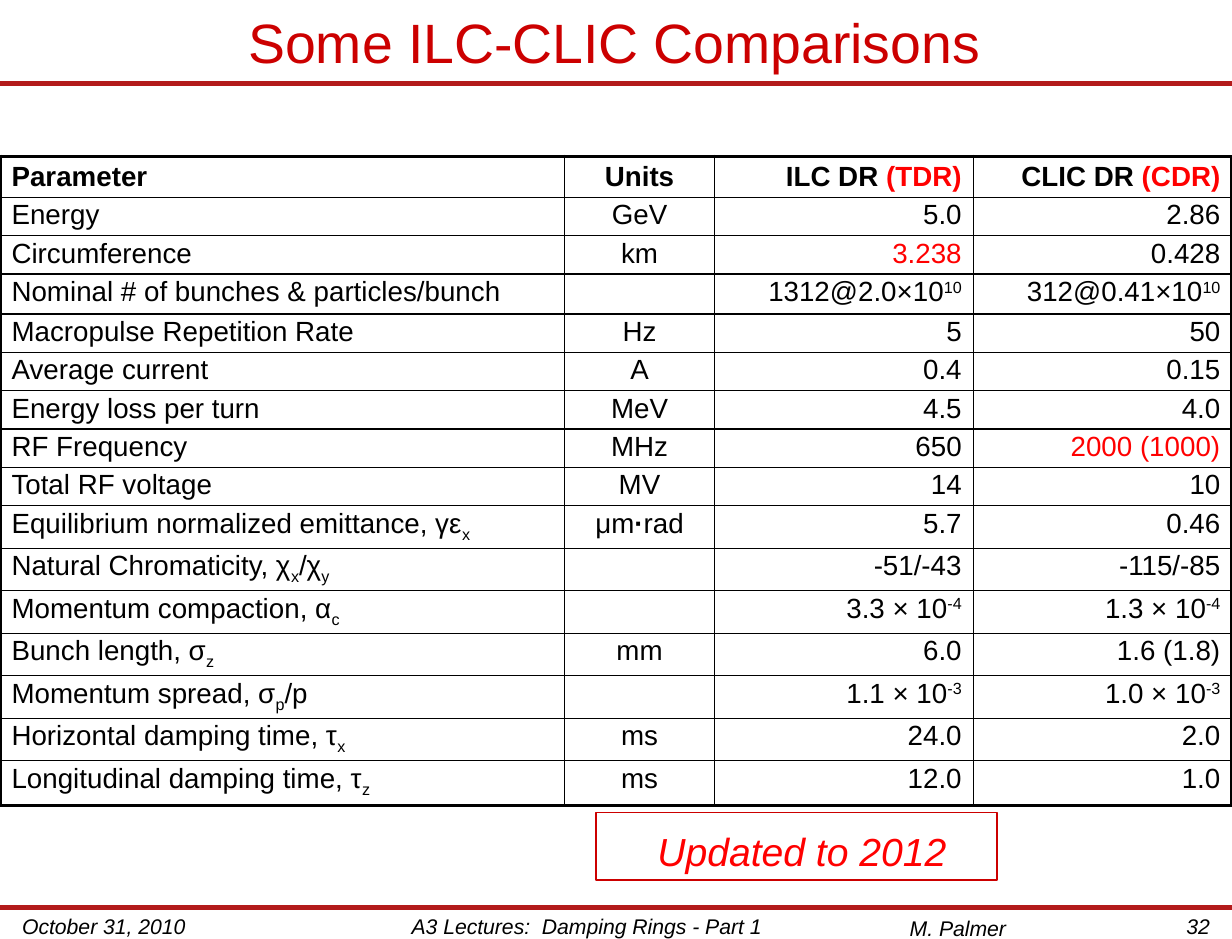
from lxml import etree
from pptx import Presentation
from pptx.dml.color import RGBColor
from pptx.enum.shapes import MSO_CONNECTOR, MSO_SHAPE
from pptx.enum.text import MSO_ANCHOR, PP_ALIGN
from pptx.oxml.ns import qn
from pptx.util import Cm, Pt

LEFT, CENTER, RIGHT = PP_ALIGN.LEFT, PP_ALIGN.CENTER, PP_ALIGN.RIGHT
MIDDLE = MSO_ANCHOR.MIDDLE
STRAIGHT = MSO_CONNECTOR.STRAIGHT
RECTANGLE = MSO_SHAPE.RECTANGLE

BLACK = RGBColor(0x00, 0x00, 0x00)
WHITE = RGBColor(0xFF, 0xFF, 0xFF)
RED = RGBColor(0xFF, 0x00, 0x00)
TITLE_RED = RGBColor(0xCC, 0x00, 0x00)
RULE_RED = RGBColor(0xB3, 0x1B, 0x1B)

SLIDE_W, SLIDE_H = 26.67, 20.32
RULE_TOPS = (1.8, 19.63)
TITLE = "Some ILC-CLIC Comparisons "
UPDATE = "Updated to 2012"

FOOTERS = [
    ("M. Palmer", (19.25, 19.69, 2.97, 0.81), CENTER),
    ("October 31, 2010", (0.23, 19.63, 8.66, 0.69), LEFT),
    ("A3 Lectures:  Damping Rings - Part 1", (8.66, 19.63, 8.89, 0.53), LEFT),
    ("32", (24.43, 19.63, 2.01, 0.46), RIGHT),
]

# "|" starts a new run; "_" lowers it, "^" raises it, "!" reddens it, "*" emboldens it
PARAMETERS = [
    ("Parameter", "Units", "ILC DR |!(TDR)", "CLIC DR |!(CDR)"),
    ("Energy", "GeV", "5.0", "2.86"),
    ("Circumference", "km", "!3.238", "0.428"),
    ("Nominal # of bunches & particles/bunch", "", "1312@2.0×10|^10", "312@0.41×10|^10"),
    ("Macropulse Repetition Rate", "Hz", "5", "50"),
    ("Average current", "A", "0.4", "0.15"),
    ("Energy loss per turn", "MeV", "4.5", "4.0"),
    ("RF Frequency", "MHz", "650", "!2000 (1000)"),
    ("Total RF voltage", "MV", "14", "10"),
    ("Equilibrium normalized emittance, γε|_x", "μm|*·|rad", "5.7", "0.46"),
    ("Natural Chromaticity, χ|_x|/χ|_y", "", "-51/-43", "-115/-85"),
    ("Momentum compaction, α|_c", "", "3.3 × 10|^-4", "1.3 × 10|^-4"),
    ("Bunch length, σ|_z", "mm", "6.0", "1.6 (1.8)"),
    ("Momentum spread, σ|_p|/p", "", "1.1 × 10|^-3", "1.0 × 10|^-3"),
    ("Horizontal damping time, τ|_x", "ms", "24.0", "2.0"),
    ("Longitudinal damping time, τ|_z", "ms", "12.0", "1.0"),
]
COLUMNS = [(12.22, LEFT), (3.25, CENTER), (5.6, RIGHT), (5.6, RIGHT)]
HEADER_H, PLAIN_H, SUBSCRIPT_H, LAST_H = 0.89, 0.83, 0.88, 0.92
BASELINES = {"_": "-25000", "^": "30000"}


def write(frame, text, size=13, color=BLACK, bold=False, italic=False, align=LEFT):
    paragraph = frame.paragraphs[0]
    paragraph.alignment = align
    for piece in text.split("|"):
        mark = piece[0] if piece and piece[0] in "_^!*" else ""
        run = paragraph.add_run()
        run.text = piece[len(mark):]
        run.font.name = "Arial"
        run.font.size = Pt(size)
        run.font.bold = bold or mark == "*"
        run.font.italic = italic
        run.font.color.rgb = RED if mark == "!" else color
        if mark in BASELINES:
            run.font._element.set("baseline", BASELINES[mark])


def add_text(slide, text, box, **style):
    frame = slide.shapes.add_textbox(*map(Cm, box)).text_frame
    frame.word_wrap = True
    write(frame, text, **style)


def add_rule(slide, top):
    rule = slide.shapes.add_connector(STRAIGHT, 0, Cm(top), Cm(SLIDE_W), Cm(top))
    rule.line.color.rgb = RULE_RED
    rule.line.width = Pt(3)
    etree.SubElement(rule._element.spPr, qn("a:effectLst"))


def add_borders(cell, outer_sides):
    properties = cell._tc.get_or_add_tcPr()
    for side in "LRTB":
        width = Pt(2.25 if side in outer_sides else 1)
        border = etree.SubElement(properties, qn("a:ln" + side), w=str(width))
        fill = etree.SubElement(border, qn("a:solidFill"))
        etree.SubElement(fill, qn("a:srgbClr"), val=str(BLACK))


def add_parameters(slide):
    last_row, last_column = len(PARAMETERS) - 1, len(COLUMNS) - 1
    heights = [SUBSCRIPT_H if "|_" in row[0] else PLAIN_H for row in PARAMETERS]
    heights[0], heights[-1] = HEADER_H, LAST_H
    table = slide.shapes.add_table(
        len(PARAMETERS), len(COLUMNS), 0, Cm(3.38), Cm(SLIDE_W), Cm(sum(heights))
    ).table
    table.first_row = table.horz_banding = False
    for column, (width, _) in zip(table.columns, COLUMNS):
        column.width = Cm(width)
    for r, values in enumerate(PARAMETERS):
        table.rows[r].height = Cm(heights[r])
        for c, value in enumerate(values):
            cell = table.cell(r, c)
            edges = {"L": c == 0, "R": c == last_column, "T": r == 0, "B": r == last_row}
            add_borders(cell, [side for side, outer in edges.items() if outer])
            cell.fill.solid()
            cell.fill.fore_color.rgb = WHITE
            cell.margin_left = cell.margin_right = Cm(0.25)
            cell.margin_top = Cm(0.1 if r == 0 else 0.05)
            cell.margin_bottom = Cm(0.1 if r == last_row else 0.05)
            write(cell.text_frame, value, size=17, bold=r == 0, align=COLUMNS[c][1])


def main():
    deck = Presentation()
    deck.slide_width, deck.slide_height = Cm(SLIDE_W), Cm(SLIDE_H)
    slide = deck.slides.add_slide(deck.slide_layouts[5])

    for top in RULE_TOPS:
        add_rule(slide, top)

    title = slide.shapes.title
    title.left, title.top, title.width, title.height = map(Cm, (1.35, 0, 24.23, 1.8))
    title.text_frame.vertical_anchor = MIDDLE
    write(title.text_frame, TITLE, size=34, color=TITLE_RED, align=CENTER)

    for text, box, align in FOOTERS:
        add_text(slide, text, box, italic=True, align=align)

    add_parameters(slide)

    add_text(slide, UPDATE, (13.13, 17.78, 8.46, 1.27),
             size=24, color=RED, italic=True, align=CENTER)
    frame = slide.shapes.add_shape(RECTANGLE, *map(Cm, (12.9, 17.58, 8.69, 1.47)))
    frame.shadow.inherit = False
    frame.fill.background()
    frame.line.color.rgb = TITLE_RED
    frame.line.width = Pt(1)

    deck.save("out.pptx")


if __name__ == "__main__":
    main()
